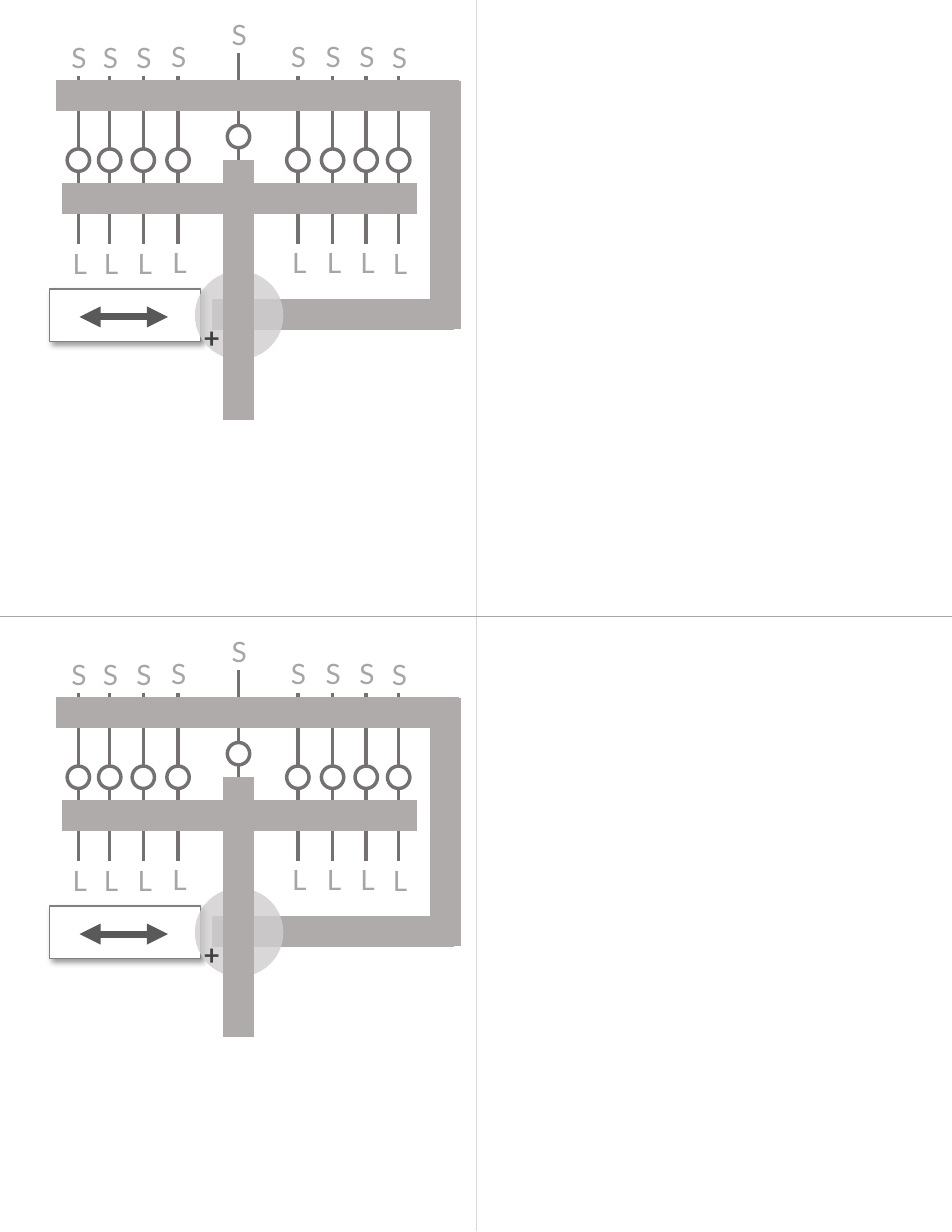
"""Build a page with two copies of a switching diagram on a four-cell grid."""
from lxml import etree
from pptx import Presentation
from pptx.dml.color import RGBColor
from pptx.enum import shapes, text
from pptx.oxml import ns
from pptx.util import Inches, Pt

PAGE = (8.5, 11)
DIAGRAM_TOPS = (0, 5.51)
GRID_BORDERS = {
    (0, 0): {"R": ("D9D9D9", 0.25), "B": ("A6A6A6", 0.5)},
    (0, 1): {"L": ("D9D9D9", 0.25), "B": ("A6A6A6", 0.5)},
    (1, 0): {"R": ("D9D9D9", 0.25), "T": ("A6A6A6", 0.5)},
    (1, 1): {"L": ("D9D9D9", 0.25), "T": ("A6A6A6", 0.5)},
}
SWITCHES = [(0.7, 0.01), (0.98, 0.01), (1.28, 0.01), (1.59, 0),
            (2.66, 0), (2.97, 0), (3.27, 0), (3.56, 0.01)]
CENTER_X = 2.13
SWITCH_TOP, CENTER_TOP = 0.68, 0.47
BARS = [(4.1, 0.85, 0.5, 0.85), (3.72, 1.77, 0.55, 1.77),
        (3.98, 0.72, 3.98, 2.94), (4.05, 2.81, 1.89, 2.81)]
CENTER_BAR = (CENTER_X, 1.43, CENTER_X, 3.75)
BAR, WIRE, LABEL = "AFABAB", "767171", "A6A6A6"


def color(value):
    return RGBColor.from_string(value)


def add_xml(parent, tag, **attributes):
    return etree.SubElement(parent, ns.qn(tag), attributes)


def add_grid(slide):
    frame = slide.shapes.add_table(2, 2, 0, 0, *map(Inches, PAGE))
    table = frame.table
    table.first_row = table.horz_banding = False
    for (row, column), borders in GRID_BORDERS.items():
        cell = table.cell(row, column)
        properties = cell._tc.get_or_add_tcPr()
        for side in "LRTB":
            if side in borders:
                value, width = borders[side]
                line = add_xml(properties, f"a:ln{side}", w=str(Pt(width)))
                fill = add_xml(line, "a:solidFill")
                add_xml(fill, "a:srgbClr", val=value)
        cell.fill.background()


def add_line(container, ends, value, width, arrows=False):
    connector = container.shapes.add_connector(
        shapes.MSO_CONNECTOR.STRAIGHT, *map(Inches, ends))
    connector.line.color.rgb = color(value)
    connector.line.width = Pt(width)
    if arrows:
        line = connector.line._get_or_add_ln()
        for end in ("a:headEnd", "a:tailEnd"):
            add_xml(line, end, type="triangle")
    add_xml(connector._element.spPr, "a:effectLst")


def add_box(container, kind, box, fill, line=None, width=1):
    shape = container.shapes.add_shape(kind, *map(Inches, box))
    shape.shadow.inherit = False
    shape.fill.solid()
    shape.fill.fore_color.rgb = color(fill)
    if line:
        shape.line.color.rgb = color(line)
        shape.line.width = Pt(width)
    else:
        shape.line.fill.background()
    return shape


def add_switch(slide, x, y):
    group = slide.shapes.add_group_shape()
    add_line(group, (x, y, x, y + 1.5), WIRE, 2.25)
    add_box(group, shapes.MSO_SHAPE.OVAL, (x - 0.1, y + 0.65, 0.2, 0.2),
            "FFFFFF", WIRE, 2.25)


def add_label(slide, wording, x, y, width, value=LABEL, bold=False, wrap=False):
    shape = slide.shapes.add_textbox(*map(Inches, (x, y, width, 0.4)))
    frame = shape.text_frame
    frame.word_wrap = wrap
    frame.auto_size = text.MSO_AUTO_SIZE.SHAPE_TO_FIT_TEXT
    paragraph = frame.paragraphs[0]
    paragraph.text = wording
    paragraph.font.name = "Lato"
    paragraph.font.size = Pt(18)
    paragraph.font.bold = bold
    paragraph.font.color.rgb = color(value)


def add_key_box(slide, top):
    shape = add_box(slide, shapes.MSO_SHAPE.RECTANGLE,
                    (0.44, top + 2.58, 1.35, 0.47), "FFFFFF", "808080")
    effects = shape._element.spPr.find(ns.qn("a:effectLst"))
    shadow = add_xml(effects, "a:outerShdw", blurRad=str(Pt(4)), dist=str(Pt(3)),
                     dir="2700000", algn="tl", rotWithShape="0")
    add_xml(add_xml(shadow, "a:srgbClr", val="000000"), "a:alpha", val="40000")


def add_crossing(slide, top):
    shape = add_box(slide, shapes.MSO_SHAPE.OVAL,
                    (1.74, top + 2.42, 0.79, 0.79), "D0CECE")
    tint = shape._element.spPr.find(".//" + ns.qn("a:srgbClr"))
    add_xml(tint, "a:alpha", val="80000")


def add_bar(slide, ends, top):
    x1, y1, x2, y2 = ends
    add_line(slide, (x1, top + y1, x2, top + y2), BAR, 20)


def add_diagram(slide, top):
    add_key_box(slide, top)
    for x, _ in SWITCHES:
        add_switch(slide, x, top + SWITCH_TOP)
    add_switch(slide, CENTER_X, top + CENTER_TOP)
    for ends in BARS:
        add_bar(slide, ends, top)
    add_crossing(slide, top)
    add_bar(slide, CENTER_BAR, top)
    add_label(slide, "+", 1.72, top + 2.81, 0.38, "404040", bold=True)
    for x, drop in SWITCHES:
        add_label(slide, "L", x - 0.15, top + 2.14 + drop, 0.32)
        add_label(slide, "S", x - 0.16, top + 0.3 + drop, 0.34, wrap=True)
    add_label(slide, "S", CENTER_X - 0.16, top + 0.11, 0.34, wrap=True)
    add_line(slide, (0.71, top + 2.83, 1.5, top + 2.83), "595959", 4.5, arrows=True)


def main():
    presentation = Presentation()
    presentation.slide_width, presentation.slide_height = map(Inches, PAGE)
    slide = presentation.slides.add_slide(presentation.slide_layouts[6])
    add_grid(slide)
    for top in DIAGRAM_TOPS:
        add_diagram(slide, top)
    presentation.save("out.pptx")


if __name__ == "__main__":
    main()
